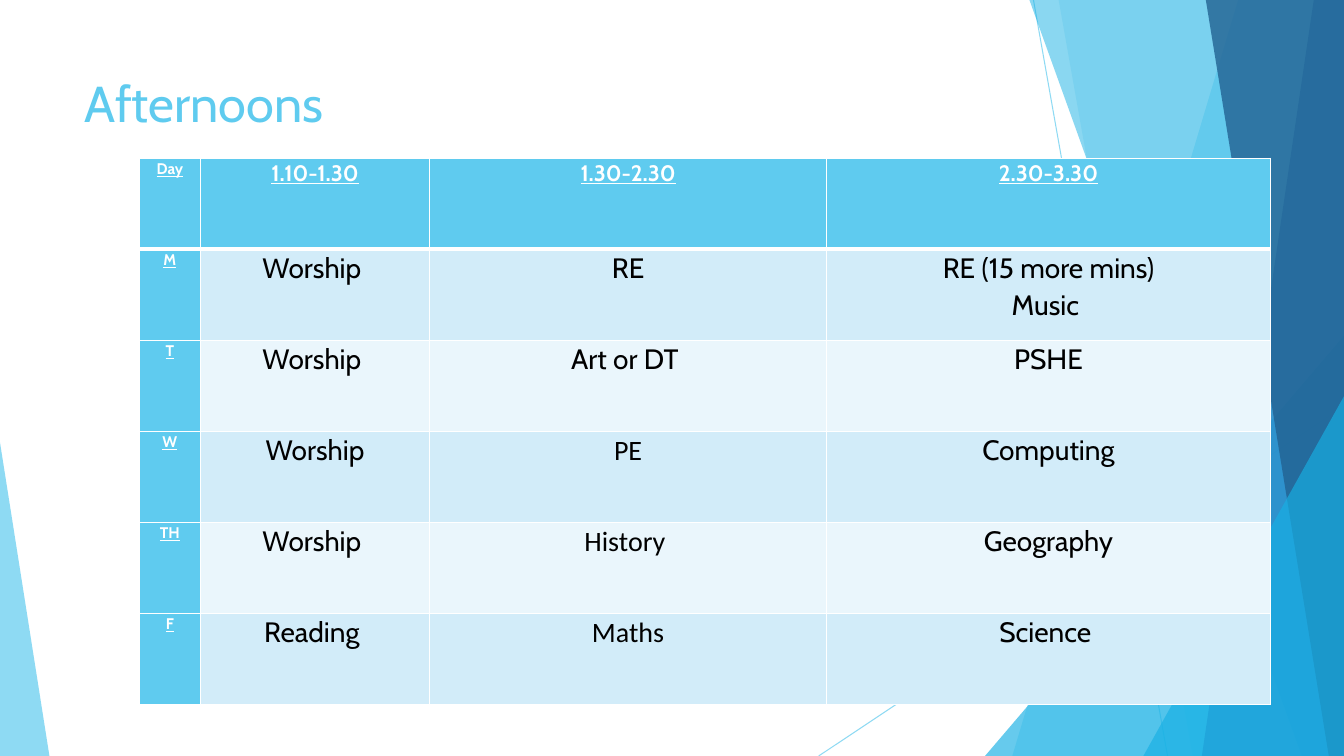
from lxml import etree
from pptx import Presentation
from pptx.dml.color import RGBColor
from pptx.enum.shapes import MSO_CONNECTOR, MSO_SHAPE
from pptx.enum.text import MSO_ANCHOR, PP_ALIGN
from pptx.oxml.ns import qn
from pptx.util import Inches, Pt

LINE = MSO_CONNECTOR.STRAIGHT
TRIANGLE = MSO_SHAPE.ISOSCELES_TRIANGLE
TOP = MSO_ANCHOR.TOP
LEFT, CENTER = PP_ALIGN.LEFT, PP_ALIGN.CENTER
WIDE, HIGH = 13.33, 7.5
SKY, AQUA, BLUE, NAVY = "5FCBEF", "17B0E4", "2E83C3", "226292"
WHITE, BLACK = "FFFFFF", "000000"
BANDS = ["EAF6FC", "D2ECF9"]


def paint(fill, color):
    fill.solid()
    fill.fore_color.rgb = RGBColor.from_string(color)


def fade(shape, percent):
    """Make the shape's colour opaque to the given percentage."""
    color = next(shape.element.iter(qn("a:srgbClr")))
    etree.SubElement(color, qn("a:alpha"), val=str(percent * 1000))


deck = Presentation()
deck.slide_width, deck.slide_height = Inches(WIDE), Inches(HIGH)
slide = deck.slides.add_slide(deck.slide_layouts[5])
shapes = slide.shapes

# Thin lines behind the facets
for ends in [(10.25, 0, 11.58, HIGH), (WIDE, 4.03, 8.12, HIGH)]:
    line = shapes.add_connector(LINE, *[Inches(n) for n in ends])
    paint(line.line.fill, SKY)
    line.line.width = Pt(0.75)
    fade(line, 70)
    etree.SubElement(line.element.find(qn("p:spPr")), qn("a:effectLst"))

# A strip has top and bottom x; a triangle has left, top, width and apex
facets = [
    ((12.28, 10.04), SKY, 36),
    ((10.5, 11.83), SKY, 20),
    ((9.77, 3.33, 3.56, 1), AQUA, 66),
    ((10.21, 12.91), AQUA, 50),
    ((13.03, 11.92), BLUE, 70),
    ((11.96, 13.18), NAVY, 80),
    ((11.34, 3.93, 1.99, 1), AQUA, 66),
    ((0, 4.39, 0.49, 0), SKY, 70),
]
for place, color, percent in facets:
    if len(place) == 2:
        upper, lower = place
        outline = shapes.build_freeform(Inches(upper), 0)
        corners = [(WIDE, 0), (WIDE, HIGH), (lower, HIGH)]
        outline.add_line_segments([(Inches(x), Inches(y)) for x, y in corners])
        facet = outline.convert_to_shape()
    else:
        left, top, width, apex = place
        facet = shapes.add_shape(TRIANGLE, Inches(left), Inches(top),
                                 Inches(width), Inches(HIGH - top))
        facet.adjustments[0] = apex
    facet.shadow.inherit = False
    facet.line.fill.background()
    paint(facet.fill, color)
    fade(facet, percent)

# Title, in front of the facets
title = shapes.title
title.element.getparent().append(title.element)
title.left, title.top = Inches(0.74), Inches(0.67)
title.width, title.height = Inches(9.4), Inches(1.44)
frame = title.text_frame
frame.text = "Afternoons"
frame.vertical_anchor = TOP
frame.paragraphs[0].alignment = LEFT
font = frame.paragraphs[0].runs[0].font
font.name, font.size = "Cabin", Pt(36)
paint(font.fill, SKY)

# Timetable
lessons = [
    ["Day", "1.10-1.30", "1.30-2.30", "2.30-3.30"],
    ["M", "Worship ", "RE", "RE (15 more mins)\nMusic "],
    ["T", "Worship ", "Art or DT ", "PSHE"],
    ["W", "Worship", "PE", "Computing"],
    ["TH", "Worship ", "History ", "Geography"],
    ["F", "Reading ", "Maths", "Science "],
]
widths = [0.61, 2.27, 3.94, 4.4]
table = shapes.add_table(len(lessons), len(widths), Inches(1.38), Inches(1.57),
                         Inches(sum(widths)), Inches(5.42)).table
for column, width in zip(table.columns, widths):
    column.width = Inches(width)

for r, row in enumerate(lessons):
    for c, text in enumerate(row):
        cell = table.cell(r, c)
        head = r == 0 or c == 0
        cell.margin_left = cell.margin_right = Inches(0.07)
        cell.margin_top = cell.margin_bottom = 0
        cell.vertical_anchor = TOP

        # The rule under the header row is thicker
        props = cell._tc.get_or_add_tcPr()
        for side in ["L", "R", "T", "B"]:
            thick = (r, side) in [(0, "B"), (1, "T")]
            edge = etree.SubElement(props, qn("a:ln" + side),
                                    w=str(Pt(3 if thick else 1)))
            solid = etree.SubElement(edge, qn("a:solidFill"))
            etree.SubElement(solid, qn("a:srgbClr"), val=WHITE)
        paint(cell.fill, SKY if head else BANDS[r % 2])

        cell.text_frame.text = text
        for para in cell.text_frame.paragraphs:
            para.alignment = CENTER
            para.line_spacing = 1.07
            font = para.runs[0].font
            font.name = "Calibri" if c == 2 and r > 2 else "Cabin"
            font.size = Pt(11 if c == 0 else 16 if r == 0 else 20)
            font.bold = font.underline = head
            paint(font.fill, WHITE if head else BLACK)

deck.save("out.pptx")
